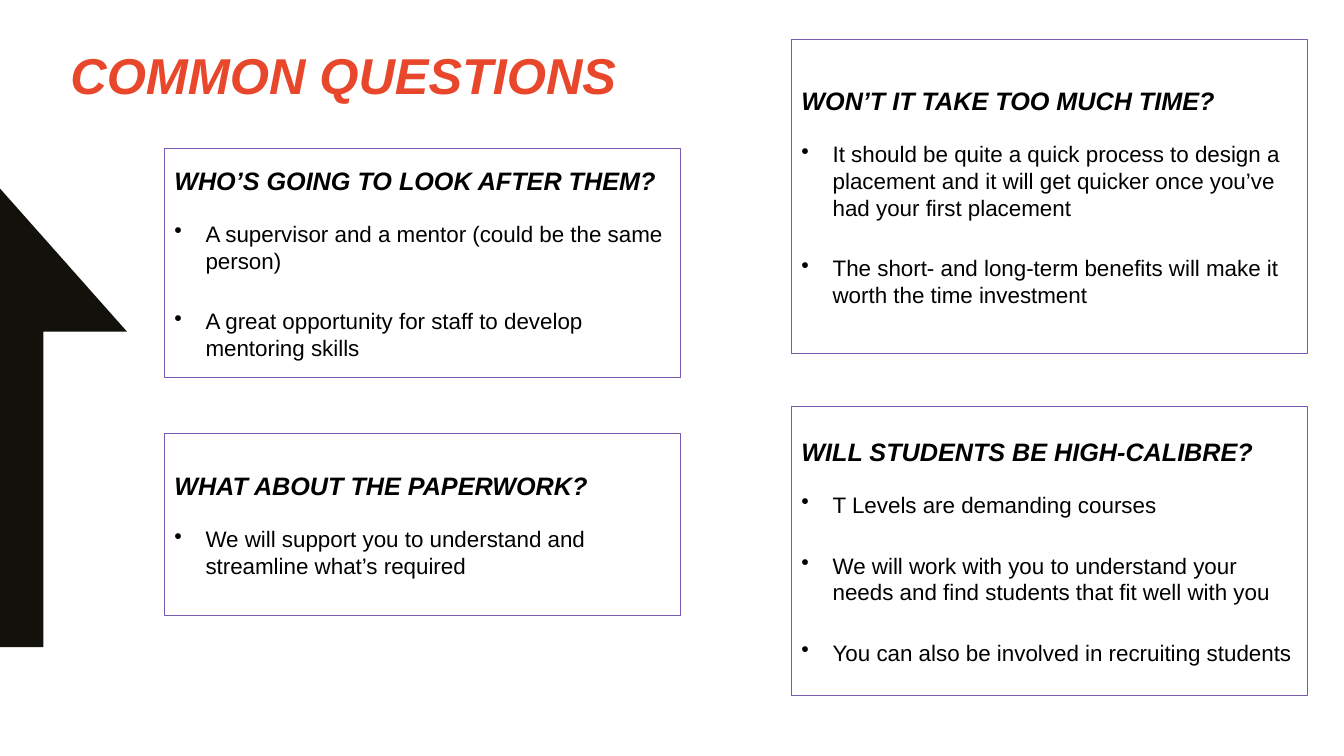
import lxml.etree
import pptx
import pptx.dml.color
import pptx.enum.shapes
import pptx.enum.text
import pptx.oxml.ns
import pptx.util

Inches = pptx.util.Inches
Pt = pptx.util.Pt

COLOURS = {"arrow": "12110C", "title": "E8472B", "border": "765AB0", "text": "000000"}
FORMATS = {
    "title": {"size": Pt(36), "bold": True, "italic": True},
    "question": {"size": Pt(18), "bold": True, "italic": True},
    "answer": {"size": Pt(16), "bold": False, "italic": False},
}
SPACING = {
    "question": {"space_after": Pt(6)},
    "answer": {"space_before": Pt(12), "space_after": Pt(12)},
}
LEFT, RIGHT, CARD_WIDTH = 1.63, 7.85, 5.12
CARDS = [
    ((LEFT, 1.47, CARD_WIDTH, 2.28), "WHO’S GOING TO LOOK AFTER THEM?", [
        "A supervisor and a mentor (could be the same person)",
        "A great opportunity for staff to develop mentoring skills",
    ]),
    ((RIGHT, 0.39, CARD_WIDTH, 3.12), "WON’T IT TAKE TOO MUCH TIME?", [
        "It should be quite a quick process to design a placement and it will get "
        "quicker once you’ve had your first placement",
        "The short- and long-term benefits will make it worth the time investment",
    ]),
    ((RIGHT, 4.03, CARD_WIDTH, 2.87), "WILL STUDENTS BE HIGH-CALIBRE?", [
        "T Levels are demanding courses",
        "We will work with you to understand your needs and find students that fit "
        "well with you",
        "You can also be involved in recruiting students",
    ]),
    ((LEFT, 4.3, CARD_WIDTH, 1.81), "WHAT ABOUT THE PAPERWORK?", [
        "We will support you to understand and streamline what’s required",
    ]),
]


def colour(name):
    """Return the named palette colour."""
    return pptx.dml.color.RGBColor.from_string(COLOURS[name])


def apply(target, values):
    """Set every given attribute on the target."""
    for name, value in values.items():
        setattr(target, name, value)


def add_text(para, text, style, ink="text"):
    """Write one formatted span into a paragraph."""
    span = para.add_run()
    span.text = text
    apply(span.font, {"name": "Arial", **FORMATS[style]})
    span.font.color.rgb = colour(ink)


def add_bullet(para):
    """Give a paragraph a hanging round bullet."""
    properties = para._p.get_or_add_pPr()
    properties.set("marL", str(Inches(0.31)))
    properties.set("indent", str(-Inches(0.31)))
    bullet = lxml.etree.SubElement(properties, pptx.oxml.ns.qn("a:buChar"))
    bullet.set("char", "•")


def add_arrow(page, box):
    """Draw the half arrow that fills the box on the left edge."""
    left, top, width, height = box
    shaft, head = 0.43, 1.42
    outline = [(width, head), (shaft, head), (shaft, height), (0, height)]
    builder = page.shapes.build_freeform(Inches(left), Inches(top))
    builder.add_line_segments(
        [(Inches(left + x), Inches(top + y)) for x, y in outline], close=True)
    arrow = builder.convert_to_shape()
    arrow.shadow.inherit = False
    arrow.fill.solid()
    arrow.fill.fore_color.rgb = colour("arrow")
    arrow.line.fill.background()


def add_title(page, box, text):
    """Write the slide title in the box."""
    frame = page.shapes.add_textbox(*map(Inches, box)).text_frame
    apply(frame, {"word_wrap": True,
                  "auto_size": pptx.enum.text.MSO_AUTO_SIZE.SHAPE_TO_FIT_TEXT})
    add_text(frame.paragraphs[0], text, "title", "title")


def add_card(page, box, question, answers):
    """Draw a bordered card with a question and its bulleted answers."""
    card = page.shapes.add_shape(
        pptx.enum.shapes.MSO_SHAPE.RECTANGLE, *map(Inches, box))
    card.shadow.inherit = False
    card.fill.background()
    card.line.color.rgb = colour("border")
    card.line.width = Pt(0.75)
    frame = card.text_frame
    apply(frame, {"word_wrap": True,
                  "vertical_anchor": pptx.enum.text.MSO_ANCHOR.MIDDLE})
    lines = [(question, "question")] + [(answer, "answer") for answer in answers]
    for number, (text, style) in enumerate(lines):
        para = frame.add_paragraph() if number else frame.paragraphs[0]
        if style == "answer":
            add_bullet(para)
        apply(para, {"alignment": pptx.enum.text.PP_ALIGN.LEFT, **SPACING[style]})
        add_text(para, text, style)


def main():
    """Build and save the slide."""
    deck = pptx.Presentation()
    apply(deck, {"slide_width": Inches(13.33), "slide_height": Inches(7.5)})
    page = deck.slides.add_slide(deck.slide_layouts[6])
    add_arrow(page, (0, 1.87, 1.26, 4.55))
    add_title(page, (0.6, 0.39, 6.6, 0.71), "COMMON QUESTIONS")
    for box, question, answers in CARDS:
        add_card(page, box, question, answers)
    deck.save("out.pptx")


if __name__ == "__main__":
    main()
